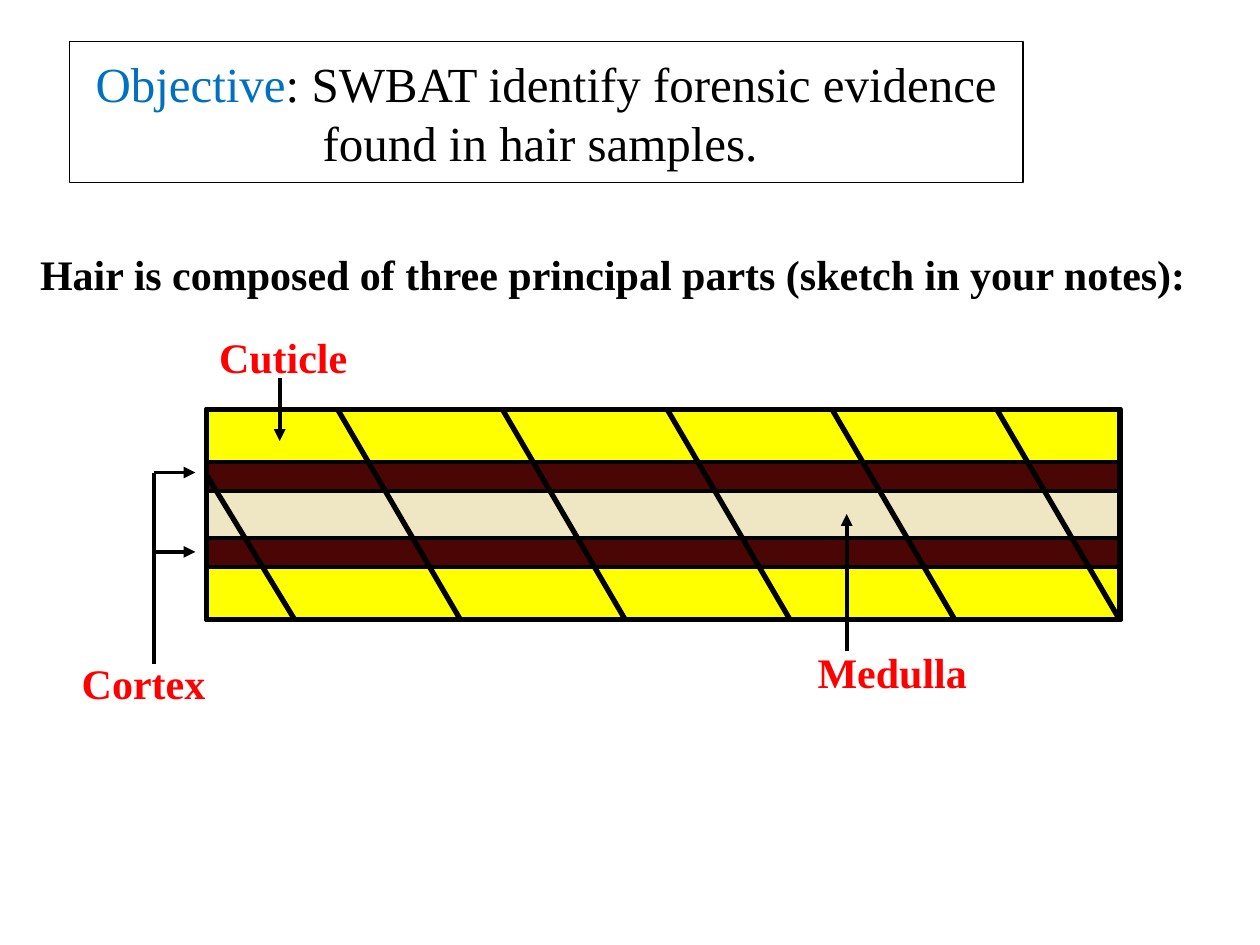
from dataclasses import dataclass

from lxml import etree
from pptx import Presentation
from pptx.dml.color import RGBColor
from pptx.enum.shapes import MSO_CONNECTOR, MSO_SHAPE
from pptx.enum.text import MSO_ANCHOR, MSO_AUTO_SIZE, PP_ALIGN
from pptx.oxml.ns import qn
from pptx.util import Inches, Pt

RECTANGLE = MSO_SHAPE.RECTANGLE
STRAIGHT = MSO_CONNECTOR.STRAIGHT
MIDDLE = MSO_ANCHOR.MIDDLE
NO_AUTOFIT = MSO_AUTO_SIZE.NONE
CENTER, LEFT = PP_ALIGN.CENTER, PP_ALIGN.LEFT


@dataclass(frozen=True)
class Theme:
    font: str = "Times New Roman"
    ink: str = "000000"
    accent: str = "0070C0"
    label: str = "FF0000"
    cuticle: str = "FFFF00"
    cortex: str = "4A0505"
    medulla: str = "EFE7C3"
    title_size: float = 28
    body_size: float = 24
    heavy: float = 3
    medium: float = 2.25
    thin: float = 0.75


THEME = Theme()
HAIR_LEFT, HAIR_WIDTH = 1.64, 7.25
HAIR_TOP, HAIR_HEIGHT = 3.25, 1.67
HAIR_BOTTOM = HAIR_TOP + HAIR_HEIGHT
LAYERS = [
    (HAIR_TOP, HAIR_HEIGHT, THEME.cuticle, THEME.heavy),
    (3.67, 0.83, THEME.cortex, THEME.medium),
    (3.9, 0.37, THEME.medulla, THEME.medium),
]


def set_line(line, width):
    line.color.rgb = RGBColor.from_string(THEME.ink)
    line.width = Pt(width)


def add_span(para, text, size=THEME.body_size, color=THEME.ink, bold=False):
    span = para.add_run()
    span.text = text
    span.font.name = THEME.font
    span.font.size = Pt(size)
    span.font.bold = bold
    span.font.color.rgb = RGBColor.from_string(color)


def format_frame(frame, align):
    frame.word_wrap = True
    frame.auto_size = NO_AUTOFIT
    frame.vertical_anchor = MIDDLE
    frame.margin_left = frame.margin_right = Inches(0.1)
    frame.margin_top = frame.margin_bottom = Inches(0.05)
    para = frame.paragraphs[0]
    para.alignment = align
    return para


def add_label(slide, text, left, top, width, color=THEME.label):
    box = slide.shapes.add_textbox(
        Inches(left), Inches(top), Inches(width), Inches(0.5))
    add_span(format_frame(box.text_frame, LEFT), text, color=color, bold=True)


def add_title(slide):
    title = slide.shapes.title
    title.left, title.top = Inches(0.55), Inches(0.33)
    title.width, title.height = Inches(7.57), Inches(1.12)
    set_line(title.line, THEME.thin)
    para = format_frame(title.text_frame, CENTER)
    add_span(para, "Objective", size=THEME.title_size, color=THEME.accent)
    add_span(para, ": SWBAT identify forensic evidence found in hair samples. ",
             size=THEME.title_size)


def add_layers(slide, filled):
    for top, height, color, width in LAYERS:
        layer = slide.shapes.add_shape(
            RECTANGLE, Inches(HAIR_LEFT), Inches(top),
            Inches(HAIR_WIDTH), Inches(height))
        layer.shadow.inherit = False
        set_line(layer.line, width)
        if filled:
            layer.fill.solid()
            layer.fill.fore_color.rgb = RGBColor.from_string(color)
        else:
            layer.fill.background()


def add_line(slide, start, end, width=THEME.medium, arrow=False):
    line = slide.shapes.add_connector(
        STRAIGHT, *(Inches(value) for value in (*start, *end)))
    set_line(line.line, width)
    properties = line._element.spPr
    if arrow:
        outline = properties.find(qn("a:ln"))
        etree.SubElement(outline, qn("a:tailEnd"), type="triangle")
    etree.SubElement(properties, qn("a:effectLst"))


def add_scales(slide):
    for index in range(5):
        left = 2.68 + 1.308 * index
        add_line(slide, (left, HAIR_TOP), (left + 0.975, HAIR_BOTTOM), THEME.heavy)
    add_line(slide, (HAIR_LEFT, 3.77), (2.34, HAIR_BOTTOM), THEME.heavy)


def add_cortex_bracket(slide):
    add_line(slide, (1.22, 5.27), (1.22, 3.75))
    for top in (3.75, 4.38):
        add_line(slide, (1.22, top), (1.55, top), arrow=True)


def main():
    deck = Presentation()
    deck.slide_width, deck.slide_height = Inches(10), Inches(7.5)
    slide = deck.slides.add_slide(deck.slide_layouts[5])
    add_title(slide)
    add_label(slide,
              "Hair is composed of three principal parts (sketch in your notes):",
              0.22, 1.92, 9.67, color=THEME.ink)
    add_label(slide, "Cuticle", HAIR_LEFT, 2.58, 7.67)
    add_layers(slide, filled=True)
    add_label(slide, "Cortex", 0.55, 5.17, 5.42)
    add_cortex_bracket(slide)
    add_label(slide, "Medulla", 6.39, 5.08, 3.42)
    add_scales(slide)
    add_layers(slide, filled=False)
    add_line(slide, (6.72, 5.17), (6.72, 4.08), arrow=True)
    add_line(slide, (2.22, 3), (2.22, 3.5), arrow=True)
    deck.save("out.pptx")


if __name__ == "__main__":
    main()
